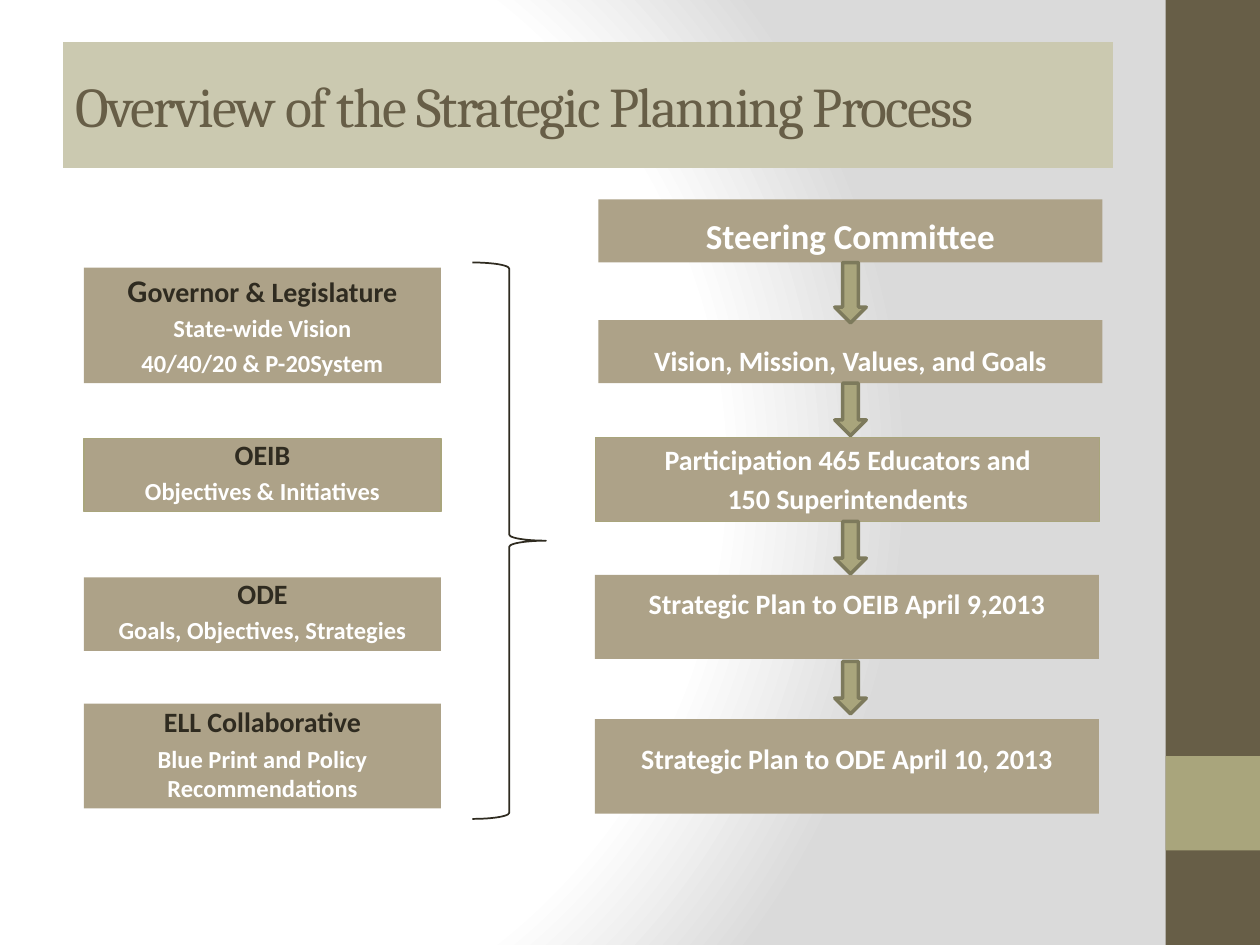
import dataclasses

import lxml.etree
import pptx
import pptx.dml.color
import pptx.enum.shapes
import pptx.enum.text
import pptx.oxml.ns
import pptx.util

Pt = pptx.util.Pt
Kind = pptx.enum.shapes.MSO_SHAPE
Align = pptx.enum.text.PP_ALIGN
Anchor = pptx.enum.text.MSO_ANCHOR


@dataclasses.dataclass(frozen=True)
class Theme:
    dark: str = "675E47"
    green: str = "A9A57C"
    edge: str = "7D7A5C"
    pale: str = "CBC9B0"
    tan: str = "ADA288"
    ink: str = "2F2B20"
    white: str = "FFFFFF"
    grey: str = "DADADA"
    title: int = 32
    large: int = 20
    cap: int = 18
    head: int = 16
    note: int = 14
    serif: str = "Cambria"
    sans: str = "Calibri"


THEME = Theme()


def paint(color):
    return pptx.dml.color.RGBColor.from_string(color)


def apply(thing, values):
    for name, value in values.items():
        setattr(thing, name, value)


def draw(slide, kind, box, fill=None, line=None, width=1):
    shape = slide.shapes.add_shape(kind, *map(Pt, box))
    shape.shadow.inherit = False
    if fill:
        shape.fill.solid()
        shape.fill.fore_color.rgb = paint(fill)
    else:
        shape.fill.background()
    if line:
        shape.line.color.rgb = paint(line)
        shape.line.width = Pt(width)
    else:
        shape.line.fill.background()
    return shape


def write(para, text, size, color, face=THEME.sans, bold=True):
    run = para.add_run()
    run.text = text
    apply(run.font, {"name": face, "size": Pt(size), "bold": bold})
    run.font.color.rgb = paint(color)
    return run


def label(slide, box, lines, line=None, foot=3.6):
    """Draw a tan box; each line is a list of (text, size, color) runs."""
    shape = draw(slide, Kind.RECTANGLE, box, THEME.tan, line, 0.75)
    frame = shape.text_frame
    apply(frame, {"word_wrap": True, "vertical_anchor": Anchor.BOTTOM,
                  "margin_bottom": Pt(foot)})
    for index, runs in enumerate(lines):
        para = frame.paragraphs[0] if index == 0 else frame.add_paragraph()
        gap = 0.2 * runs[0][1] if index else 0
        apply(para, {"alignment": Align.CENTER, "space_before": Pt(gap)})
        for run in runs:
            write(para, *run)


def shade(slide):
    """Give the slide a round gradient, white at the left and grey at the right."""
    slide.background.fill.gradient()
    grad = next(slide.element.iter(pptx.oxml.ns.qn("a:gradFill")))
    for child in list(grad):
        grad.remove(child)

    def add(parent, tag, **values):
        node = lxml.etree.SubElement(parent, pptx.oxml.ns.qn(tag))
        for name, value in values.items():
            node.set(name, str(value))
        return node

    stops = add(grad, "a:gsLst")
    for pos, color in ((0, THEME.white), (75, THEME.white), (100, THEME.grey)):
        add(add(stops, "a:gs", pos=pos * 1000), "a:srgbClr", val=color)
    round_ = add(grad, "a:path", path="circle")
    add(round_, "a:fillToRect", l=20000, t=50000, r=100000, b=50000)


def stripe(slide, box):
    left, top, width, height = box
    draw(slide, Kind.RECTANGLE, box, THEME.dark)
    draw(slide, Kind.RECTANGLE, (left, top + 0.8 * height, width, width),
         THEME.green)


def header(slide, box, text):
    title = slide.shapes.title
    apply(title, dict(zip(("left", "top", "width", "height"), map(Pt, box))))
    title.fill.solid()
    title.fill.fore_color.rgb = paint(THEME.pale)
    frame = title.text_frame
    apply(frame, {"word_wrap": True, "vertical_anchor": Anchor.MIDDLE,
                  "auto_size": pptx.enum.text.MSO_AUTO_SIZE.NONE})
    para = frame.paragraphs[0]
    para.alignment = Align.LEFT
    run = write(para, text, THEME.title, THEME.dark, THEME.serif, False)
    run.font._element.set("spc", "-100")


def inputs(slide, box):
    """Place the four sources and the brace that joins them."""
    left, top, width, height = box

    def head(text):
        return [(text, THEME.head, THEME.ink)]

    def note(text):
        return [(text, THEME.note, THEME.white)]

    lead = [("G", THEME.cap, THEME.ink)] + head("overnor & Legislature")
    rows = (
        (3, 66, None, [lead, note("State-wide Vision"),
                       note("40/40/20 & P-20System")]),
        (100.5, 42, THEME.green, [head("OEIB"),
                                  note("Objectives & Initiatives")]),
        (180, 42, None, [head("ODE"), note("Goals, Objectives, Strategies")]),
        (252, 60, None, [head("ELL Collaborative"),
                         note("Blue Print and Policy Recommendations")]),
    )
    for drop, tall, line, lines in rows:
        label(slide, (left, top + drop, 204, tall), lines, line)
    draw(slide, Kind.RIGHT_BRACE, (left + width - 42, top, 42, height),
         line=THEME.ink)


def steps(slide, box):
    """Place the five steps from top to bottom, with arrows between them."""
    left, top, width, _ = box
    rows = (
        (2, 0, 36, THEME.large, None, 3.6, ["Steering Committee"]),
        (2, 69, 36, THEME.head, None, 3.6,
         ["Vision, Mission, Values, and Goals"]),
        (0.5, 136, 48, THEME.head, THEME.green, 3.6,
         ["Participation 465 Educators and", "150 Superintendents"]),
        (0, 214.5, 48, THEME.head, None, 22,
         ["Strategic Plan to OEIB April 9,2013"]),
        (0, 297, 54, THEME.head, None, 22,
         ["Strategic Plan to ODE April 10, 2013"]),
    )
    for shift, drop, tall, size, line, foot, texts in rows:
        lines = [[(text, size, THEME.white)] for text in texts]
        label(slide, (left + shift, top + drop, width, tall), lines, line, foot)
    for drop, tall in ((36, 34.5), (105, 30), (184, 30), (264, 30)):
        draw(slide, Kind.DOWN_ARROW,
             (left + width / 2 - 7, top + drop, 18, tall),
             THEME.green, THEME.edge, 2)


def main():
    deck = pptx.Presentation()
    apply(deck, {"slide_width": Pt(720), "slide_height": Pt(540)})
    slide = deck.slides.add_slide(deck.slide_layouts[5])
    shade(slide)
    stripe(slide, (666, 0, 54, 540))
    header(slide, (36, 24, 600, 72), "Overview of the Strategic Planning Process")
    inputs(slide, (48, 150, 264, 318))
    steps(slide, (340, 114, 288, 351))
    deck.save("out.pptx")


if __name__ == "__main__":
    main()
